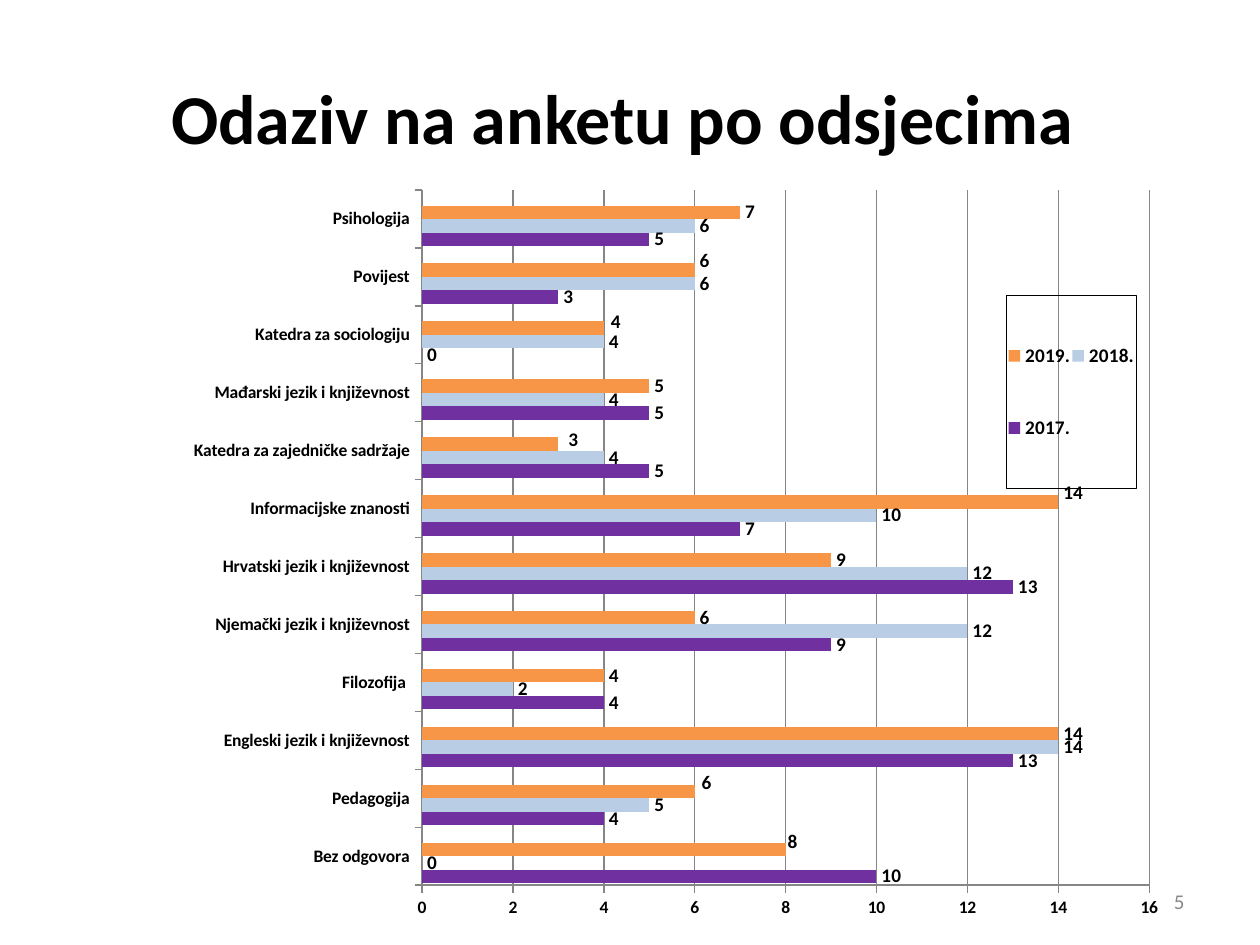
import pptx
import pptx.chart.data
import pptx.dml.color
import pptx.enum.chart
import pptx.enum.text
import pptx.oxml
import pptx.oxml.ns
import pptx.util

Pt = pptx.util.Pt
RGB = pptx.dml.color.RGBColor.from_string
ALIGN = pptx.enum.text.PP_ALIGN
CHART = pptx.enum.chart

THEME = {
    "font": "Calibri", "text": "000000", "muted": "898989", "grid": "868686",
    "title": 40, "number": 12, "axis": 10, "label": 11,
}
TITLE = "Odaziv na anketu po odsjecima "
PAGE_NUMBER = "5"
DEPARTMENTS = [
    ("Bez odgovora", 10, 0, 8),
    ("Pedagogija", 4, 5, 6),
    ("Engleski jezik i književnost", 13, 14, 14),
    ("Filozofija ", 4, 2, 4),
    ("Njemački jezik i književnost", 9, 12, 6),
    ("Hrvatski jezik i književnost", 13, 12, 9),
    ("Informacijske znanosti", 7, 10, 14),
    ("Katedra za zajedničke sadržaje", 5, 4, 3),
    ("Mađarski jezik i književnost", 5, 4, 5),
    ("Katedra za sociologiju", 0, 4, 4),
    ("Povijest", 3, 6, 6),
    ("Psihologija", 5, 6, 7),
]
SERIES = [("2017.", "7030A0"), ("2018.", "B9CDE5"), ("2019.", "F79646"), ("", "C3D69B")]
LABEL_SHIFTS = {0: (-0.3, -1), 1: (0.2, -1.1), 6: (0, -1.2),
                7: (0.5, -0.5), 9: (0.2, -0.8), 10: (0, -1.2)}
PLOT_AREA = {"x": 0.247, "y": 0.02, "w": 0.724, "h": 0.918}
LEGEND_AREA = {"x": 0.829, "y": 0.159, "w": 0.129, "h": 0.255}


def style(font, size, color=THEME["text"], bold=True):
    """Apply the theme font with a size, colour and weight."""
    font.name, font.size, font.bold = THEME["font"], Pt(size), bold
    font.color.rgb = RGB(color)


def add_text(page, text, frame, align, size, color, bold):
    """Add one vertically centred line of text."""
    box = page.shapes.add_textbox(*map(Pt, frame))
    box.text_frame.word_wrap = True
    box.text_frame.vertical_anchor = pptx.enum.text.MSO_ANCHOR.MIDDLE
    para = box.text_frame.paragraphs[0]
    para.text, para.alignment = text, align
    style(para.runs[0].font, size, color, bold)


def chart_xml(body):
    """Parse a chart fragment with its namespaces."""
    spaces = pptx.oxml.ns.nsdecls("c", "a")
    tag, rest = body.split(">", 1)
    return pptx.oxml.parse_xml(f"{tag} {spaces}>{rest}")


def layout(values, head=""):
    """Build a manual layout from fractions of the chart."""
    items = "".join(f'<c:{key} val="{value}"/>' for key, value in values.items())
    return chart_xml(f"<c:layout><c:manualLayout>{head}{items}</c:manualLayout></c:layout>")


def style_axes(chart):
    """Format both axes and the gridlines."""
    for axis in (chart.category_axis, chart.value_axis):
        style(axis.tick_labels.font, THEME["axis"])
        axis.major_tick_mark = CHART.XL_TICK_MARK.OUTSIDE
        axis.format.line.color.rgb = RGB(THEME["grid"])
    values = chart.value_axis
    values.minimum_scale, values.maximum_scale, values.major_unit = 0, 16, 2
    values.has_major_gridlines = True
    values.major_gridlines.format.line.color.rgb = RGB(THEME["grid"])


def style_series(chart):
    """Colour the bars, show their values and shift the crowded labels."""
    for series, (_, color) in zip(chart.plots[0].series, SERIES):
        series.format.fill.solid()
        series.format.fill.fore_color.rgb = RGB(color)
        labels = series.data_labels
        labels.show_value = True
        labels.position = CHART.XL_LABEL_POSITION.OUTSIDE_END
        style(labels.font, THEME["label"])
    newest = chart.plots[0].series[2]
    for index in LABEL_SHIFTS:
        label = newest.points[index].data_label
        style(label.font, THEME["label"])
        label.position = CHART.XL_LABEL_POSITION.OUTSIDE_END
    for node, (x, y) in zip(chart.element.xpath("//c:dLbl"), LABEL_SHIFTS.values()):
        node[0].addnext(layout({"x": x / 100, "y": y / 100}))


def style_legend(chart):
    """Place the outlined legend over the plot."""
    chart.has_legend = True
    legend = chart.legend
    legend.position = CHART.XL_LEGEND_POSITION.RIGHT
    legend.include_in_layout = True
    style(legend.font, THEME["label"])
    place = chart.element.xpath("//c:legend/c:legendPos")[0]
    edges = '<c:xMode val="edge"/><c:yMode val="edge"/>'
    place.addnext(layout(LEGEND_AREA, edges))
    place.addnext(chart_xml('<c:legendEntry><c:idx val="0"/><c:delete val="1"/></c:legendEntry>'))
    chart.element.xpath("//c:legend/c:overlay")[0].addnext(chart_xml(
        '<c:spPr><a:ln w="9525"><a:solidFill>'
        f'<a:srgbClr val="{THEME["text"]}"/></a:solidFill></a:ln></c:spPr>'))


def add_survey_chart(page):
    """Add the clustered bars of answers by department and year."""
    names, *columns = zip(*DEPARTMENTS)
    columns.append([None] * len(names))
    data = pptx.chart.data.CategoryChartData()
    data.categories = names
    for (name, _), column in zip(SERIES, columns):
        data.add_series(name, column)
    chart = page.shapes.add_chart(
        CHART.XL_CHART_TYPE.BAR_CLUSTERED, Pt(99.4), Pt(100), Pt(574), Pt(432.7), data).chart
    style(chart.font, THEME["axis"], bold=False)
    chart.has_title = False
    plot = chart.plots[0]
    plot.gap_width, plot.overlap, plot.vary_by_categories = 29, 0, False
    style_axes(chart)
    style_series(chart)
    style_legend(chart)
    area = chart.element.xpath("//c:plotArea")[0]
    for old in area.xpath("./c:layout"):
        area.remove(old)
    area.insert(0, layout(PLOT_AREA, '<c:layoutTarget val="inner"/>'
                          '<c:xMode val="edge"/><c:yMode val="edge"/>'))


def main():
    """Build and save the survey slide."""
    deck = pptx.Presentation()
    deck.slide_width, deck.slide_height = Pt(720), Pt(540)
    page = deck.slides.add_slide(deck.slide_layouts[6])
    add_text(page, TITLE, (36, 21.6, 648, 90), ALIGN.CENTER,
             THEME["title"], THEME["text"], True)
    add_text(page, PAGE_NUMBER, (516, 500.5, 168, 28.75), ALIGN.RIGHT,
             THEME["number"], THEME["muted"], False)
    add_survey_chart(page)
    deck.save("out.pptx")


if __name__ == "__main__":
    main()
